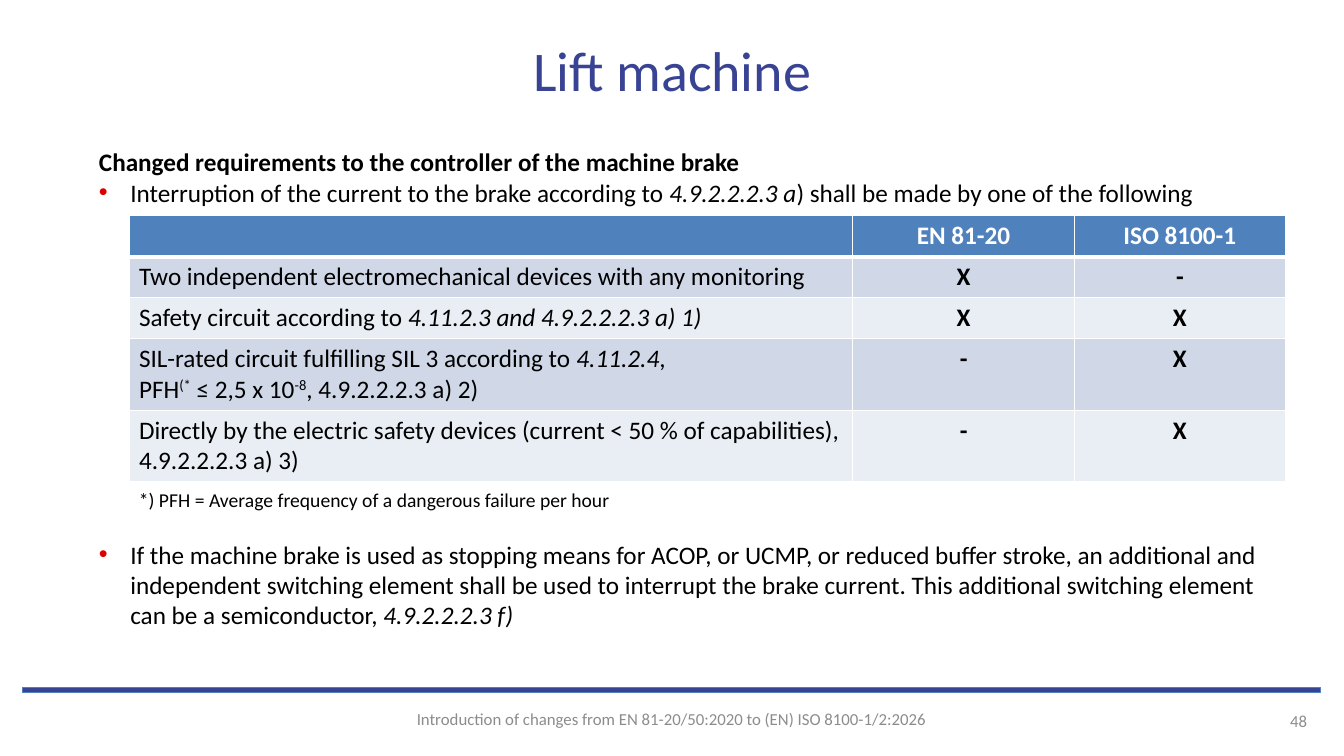
from dataclasses import dataclass

from lxml import etree
from pptx import Presentation
from pptx import util as u
from pptx.dml.color import RGBColor
from pptx.enum import shapes, text
from pptx.oxml import ns

Cm, Pt = u.Cm, u.Pt
LEFT, CENTER, RIGHT = text.PP_ALIGN.LEFT, text.PP_ALIGN.CENTER, text.PP_ALIGN.RIGHT
TOP, MIDDLE = text.MSO_ANCHOR.TOP, text.MSO_ANCHOR.MIDDLE


@dataclass(frozen=True)
class Theme:
    font: str = "Calibri"
    title_size: int = 40
    body_size: int = 18
    note_size: int = 14
    footer_size: int = 12
    navy: str = "394393"
    blue: str = "4F81BD"
    red: str = "DC0000"
    grey: str = "8C8C8C"
    black: str = "000000"
    white: str = "FFFFFF"
    bands: tuple[str, str] = ("D0D8E8", "E9EDF4")


@dataclass(frozen=True)
class Span:
    text: str
    italic: bool = False
    raised: bool = False


@dataclass(frozen=True)
class Option:
    lines: list[list[Span]]
    marks: tuple[str, str]
    height: float


@dataclass(frozen=True)
class Label:
    text: str
    box: tuple[float, float, float, float]
    size: int
    color: str
    align: int
    anchor: int


T = Theme()

ONE_LINE, TWO_LINES = 1.03, 1.78  # row heights
OPTIONS = [
    Option([[Span("Two independent electromechanical devices with any monitoring")]],
           ("X", "-"), ONE_LINE),
    Option([[Span("Safety circuit according to"),
             Span(" 4.11.2.3 and 4.9.2.2.2.3 a) 1)", italic=True)]],
           ("X", "X"), ONE_LINE),
    Option([[Span("SIL-rated circuit fulfilling SIL 3 according to "),
             Span("4.11.2.4", italic=True), Span(",")],
            [Span("PFH"), Span("(*", raised=True), Span(" ≤ 2,5 x 10"),
             Span("-8", raised=True), Span(", 4.9.2.2.2.3 a) 2)")]],
           ("-", "X"), TWO_LINES),
    Option([[Span("Directly by the electric safety devices (current < 50 % of "
                  "capabilities), 4.9.2.2.2.3 a) 3)")]],
           ("-", "X"), TWO_LINES),
]
COLUMNS = (18.24, 5.59, 5.31)
HEADINGS = ("", "EN 81-20", "ISO 8100-1")

LABELS = [
    Label("*) PFH = Average frequency of a dangerous failure per hour",
          (3.25, 12.17, 16.94, 0.86), T.note_size, T.black, LEFT, TOP),
    Label("Introduction of changes from EN 81-20/50:2020 to (EN) ISO 8100-1/2:2026",
          (7.54, 17.6, 18.77, 1.02), T.footer_size, T.grey, CENTER, MIDDLE),
    Label("48", (26.97, 17.65, 6.22, 1.02), T.footer_size, T.grey, RIGHT, MIDDLE),
]


# Text helpers
def add_run(p, content: str, *, size: int = T.body_size, color: str = T.black,
            bold: bool = False, italic: bool = False, raised: bool = False) -> None:
    r = p.add_run()
    r.text = content
    f = r.font
    f.name, f.size, f.bold, f.italic = T.font, Pt(size), bold, italic
    f.color.rgb = RGBColor.from_string(color)
    if raised:
        r._r.get_or_add_rPr().set("baseline", "30000")


def add_spans(p, spans: list[Span]) -> None:
    for span in spans:
        add_run(p, span.text, italic=span.italic, raised=span.raised)


def place(sp, left: float, top: float, width: float, height: float) -> None:
    sp.left, sp.top, sp.width, sp.height = Cm(left), Cm(top), Cm(width), Cm(height)


def format_item(p, margin: float, hanging: float = 0, bullet: bool = False) -> None:
    pPr = p._p.get_or_add_pPr()
    pPr.set("marL", str(Cm(margin)))
    pPr.set("indent", str(-Cm(hanging)))
    p.level = 1
    p.space_before = Pt(0)
    if not bullet:
        etree.SubElement(pPr, ns.qn("a:buNone"))
        return
    color = etree.SubElement(pPr, ns.qn("a:buClr"))
    etree.SubElement(color, ns.qn("a:srgbClr"), val=T.red)
    etree.SubElement(pPr, ns.qn("a:buFont"), typeface="Arial")
    etree.SubElement(pPr, ns.qn("a:buChar"), char="•")


# Table cells
def style_cell(cell, fill: str, edges: dict[str, float]) -> None:
    tcPr = cell._tc.get_or_add_tcPr()
    for side in ("L", "R", "T", "B"):
        ln = etree.SubElement(tcPr, ns.qn(f"a:ln{side}"), w=str(Pt(edges.get(side, 1))))
        solid = etree.SubElement(ln, ns.qn("a:solidFill"))
        etree.SubElement(solid, ns.qn("a:srgbClr"), val=T.white)
    cell.fill.solid()
    cell.fill.fore_color.rgb = RGBColor.from_string(fill)


def add_centred(cell, content: str, color: str) -> None:
    p = cell.text_frame.paragraphs[0]
    p.alignment = CENTER
    if content:
        add_run(p, content, color=color, bold=True)


# Slide parts
def add_title(slide) -> None:
    sp = slide.shapes.title
    place(sp, 1.7, 0.76, 30.48, 3.18)
    tf = sp.text_frame
    tf.auto_size, tf.vertical_anchor = text.MSO_AUTO_SIZE.NONE, TOP
    p = tf.paragraphs[0]
    p.alignment = CENTER
    add_run(p, "Lift machine", size=T.title_size, color=T.navy)


def add_body(slide) -> None:
    sp = slide.placeholders[1]
    place(sp, 0.97, 3.57, 31.27, 12.57)
    tf = sp.text_frame
    tf.auto_size, tf.vertical_anchor = text.MSO_AUTO_SIZE.NONE, TOP
    p = tf.paragraphs[0]
    format_item(p, 1.27)
    add_run(p, "Changed requirements to the controller of the machine brake", bold=True)
    p = tf.add_paragraph()
    format_item(p, 2.06, 0.79, bullet=True)
    add_spans(p, [Span("Interruption of the current to the brake according to "),
                  Span("4.9.2.2.2.3 a", italic=True),
                  Span(") shall be made by one of the following")])
    p = tf.add_paragraph()
    format_item(p, 2.06, 0.79, bullet=True)
    p.space_before = Pt(237)  # leaves room for the table and its footnote
    add_spans(p, [Span("If the machine brake is used as stopping means for ACOP, or UCMP, "
                       "or reduced buffer stroke, an additional and independent switching "
                       "element shall be used to interrupt the brake current. This "
                       "additional switching element can be a semiconductor, "),
                  Span("4.9.2.2.2.3 f)", italic=True)])


def add_options_table(slide) -> None:
    heights = [ONE_LINE] + [option.height for option in OPTIONS]
    table = slide.shapes.add_table(len(heights), len(COLUMNS), Cm(3.25), Cm(5.44),
                                   Cm(sum(COLUMNS)), Cm(sum(heights))).table
    table.horz_banding = False
    for column, width in zip(table.columns, COLUMNS):
        column.width = Cm(width)
    for row, height in zip(table.rows, heights):
        row.height = Cm(height)
    for cell, heading in zip(table.rows[0].cells, HEADINGS):
        style_cell(cell, T.blue, {"B": 3})
        add_centred(cell, heading, T.white)
    for i, option in enumerate(OPTIONS):
        cells = list(table.rows[i + 1].cells)
        for cell in cells:
            style_cell(cell, T.bands[i % 2], {"T": 3 if i == 0 else 1})
        tf = cells[0].text_frame
        for n, line in enumerate(option.lines):
            add_spans(tf.add_paragraph() if n else tf.paragraphs[0], line)
        for cell, mark in zip(cells[1:], option.marks):
            add_centred(cell, mark, T.black)


def add_label(slide, label: Label) -> None:
    tf = slide.shapes.add_textbox(*map(Cm, label.box)).text_frame
    tf.word_wrap, tf.vertical_anchor = True, label.anchor
    p = tf.paragraphs[0]
    p.alignment = label.align
    add_run(p, label.text, size=label.size, color=label.color)


def add_footer_bar(slide) -> None:
    sp = slide.shapes.add_shape(shapes.MSO_SHAPE.RECTANGLE,
                                Cm(0.58), Cm(17.32), Cm(32.69), Cm(0.13))
    sp.shadow.inherit = False
    sp.fill.solid()
    sp.fill.fore_color.rgb = RGBColor.from_string(T.navy)
    sp.line.color.rgb = RGBColor.from_string(T.blue)
    sp.line.width = Pt(0.75)


def main() -> None:
    prs = Presentation()
    prs.slide_width, prs.slide_height = Cm(33.87), Cm(19.05)
    slide = prs.slides.add_slide(prs.slide_layouts[1])
    add_title(slide)
    add_body(slide)
    add_options_table(slide)
    add_footer_bar(slide)
    for label in LABELS:
        add_label(slide, label)
    prs.save("out.pptx")


if __name__ == "__main__":
    main()
